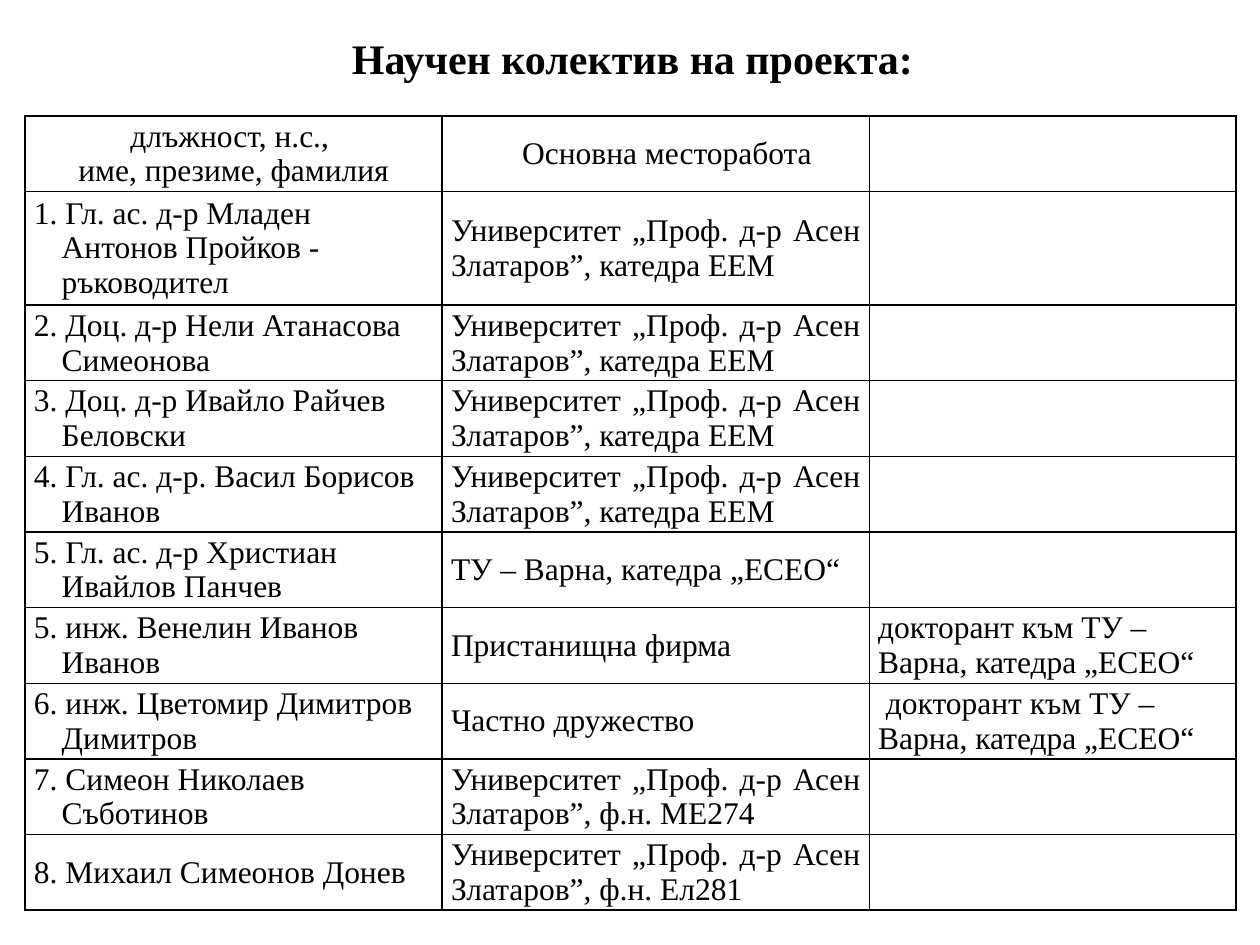
from dataclasses import dataclass

from lxml.etree import SubElement
from pptx import Presentation
from pptx.dml.color import RGBColor
from pptx.enum.text import MSO_ANCHOR, MSO_AUTO_SIZE, PP_ALIGN
from pptx.oxml.ns import qn
from pptx.util import Emu, Pt

EMU_PER_PX = 9144


@dataclass(frozen=True)
class Theme:
    font: str = "Times New Roman"
    ink: str = "000000"
    title_size: int = 24
    body_size: int = 18
    border_width: int = 1


@dataclass(frozen=True)
class CellStyle:
    align: PP_ALIGN = PP_ALIGN.LEFT
    left: int = 0
    indent: int = 0


@dataclass(frozen=True)
class Member:
    name: str
    workplace: str
    note: str = ""
    height: int = 60


THEME = Theme()
HEADING = CellStyle(PP_ALIGN.CENTER)
INDENTED_HEADING = CellStyle(PP_ALIGN.CENTER, indent=18)
NAME = CellStyle(left=22, indent=-22)
WORKPLACE = CellStyle(PP_ALIGN.JUSTIFY)
NOTE = CellStyle()

UNIVERSITY = "Университет „Проф. д-р Асен Златаров”, "
DEPARTMENT = UNIVERSITY + "катедра ЕЕМ"
DOCTORAL = "докторант към ТУ – Варна, катедра „ЕСЕО“"
HEADER_HEIGHT = 60
COLUMN_WIDTHS = (331, 339, 291)

MEMBERS = (
    Member("1. Гл. ас. д-р Младен Антонов Пройков - ръководител", DEPARTMENT, height=90),
    Member("2. Доц. д-р Нели Атанасова Симеонова", DEPARTMENT),
    Member("3. Доц. д-р Ивайло Райчев Беловски", DEPARTMENT),
    Member("4. Гл. ас. д-р. Васил Борисов Иванов", DEPARTMENT),
    Member("5. Гл. ас. д-р Христиaн Ивайлов Панчев", "ТУ – Варна, катедра „ЕСЕО“"),
    Member("5. инж. Венелин Иванов Иванов", "Пристанищна фирма", DOCTORAL),
    Member("6. инж. Цветомир Димитров Димитров", "Частно дружество", " " + DOCTORAL),
    Member("7. Симеон Николаев Съботинов", UNIVERSITY + "ф.н. МЕ274"),
    Member("8. Михаил Симеонов Донев", UNIVERSITY + "ф.н. Ел281"),
)


def px(length: int) -> Emu:
    return Emu(length * EMU_PER_PX)


def add_span(para, text: str, size: int, bold: bool = False) -> None:
    span = para.add_run()
    span.text = text
    span.font.name = THEME.font
    span.font.size = Pt(size)
    span.font.bold = bold
    span.font.color.rgb = RGBColor.from_string(THEME.ink)


def add_title(page, text: str) -> None:
    box = page.shapes.add_textbox(px(2), px(15), px(1000), px(53))
    frame = box.text_frame
    frame.word_wrap = True
    frame.auto_size = MSO_AUTO_SIZE.SHAPE_TO_FIT_TEXT
    para = frame.paragraphs[0]
    para.alignment = PP_ALIGN.CENTER
    para.line_spacing = 1.15
    add_span(para, text, THEME.title_size, bold=True)


def format_cell(cell) -> None:
    cell.vertical_anchor = MSO_ANCHOR.MIDDLE
    cell.margin_left = cell.margin_right = px(7)
    cell.margin_top = cell.margin_bottom = 0
    properties = cell._tc.get_or_add_tcPr()
    for side in ("a:lnL", "a:lnR", "a:lnT", "a:lnB"):
        line = SubElement(properties, qn(side), w=str(Pt(THEME.border_width)))
        fill = SubElement(line, qn("a:solidFill"))
        SubElement(fill, qn("a:srgbClr"), val=THEME.ink)
    cell.fill.background()


def write_cell(cell, lines: tuple[str, ...], style: CellStyle) -> None:
    frame = cell.text_frame
    for number, text in enumerate(lines):
        para = frame.add_paragraph() if number else frame.paragraphs[0]
        para.alignment = style.align
        if style.left or style.indent:
            properties = para._p.get_or_add_pPr()
            properties.set("marL", str(px(style.left)))
            properties.set("indent", str(px(style.indent)))
        add_span(para, text, THEME.body_size)


def add_team_table(page, members: tuple[Member, ...]) -> None:
    heights = [HEADER_HEIGHT] + [member.height for member in members]
    table = page.shapes.add_table(
        len(heights), len(COLUMN_WIDTHS),
        px(20), px(92), px(sum(COLUMN_WIDTHS)), px(sum(heights)),
    ).table
    table.first_row = table.horz_banding = False
    for column, width in zip(table.columns, COLUMN_WIDTHS):
        column.width = px(width)
    for row, height in zip(table.rows, heights):
        row.height = px(height)
    for cell in table.iter_cells():
        format_cell(cell)
    write_cell(table.cell(0, 0), ("длъжност, н.с., ", "име, презиме, фамилия"), HEADING)
    write_cell(table.cell(0, 1), ("Основна месторабота",), INDENTED_HEADING)
    for row, member in enumerate(members, start=1):
        write_cell(table.cell(row, 0), (member.name,), NAME)
        write_cell(table.cell(row, 1), (member.workplace,), WORKPLACE)
        if member.note:
            write_cell(table.cell(row, 2), (member.note,), NOTE)


def main() -> None:
    deck = Presentation()
    deck.slide_width, deck.slide_height = px(1000), px(750)
    page = deck.slides.add_slide(deck.slide_layouts[6])
    add_title(page, "Научен колектив на проекта:")
    add_team_table(page, MEMBERS)
    deck.save("out.pptx")


if __name__ == "__main__":
    main()
